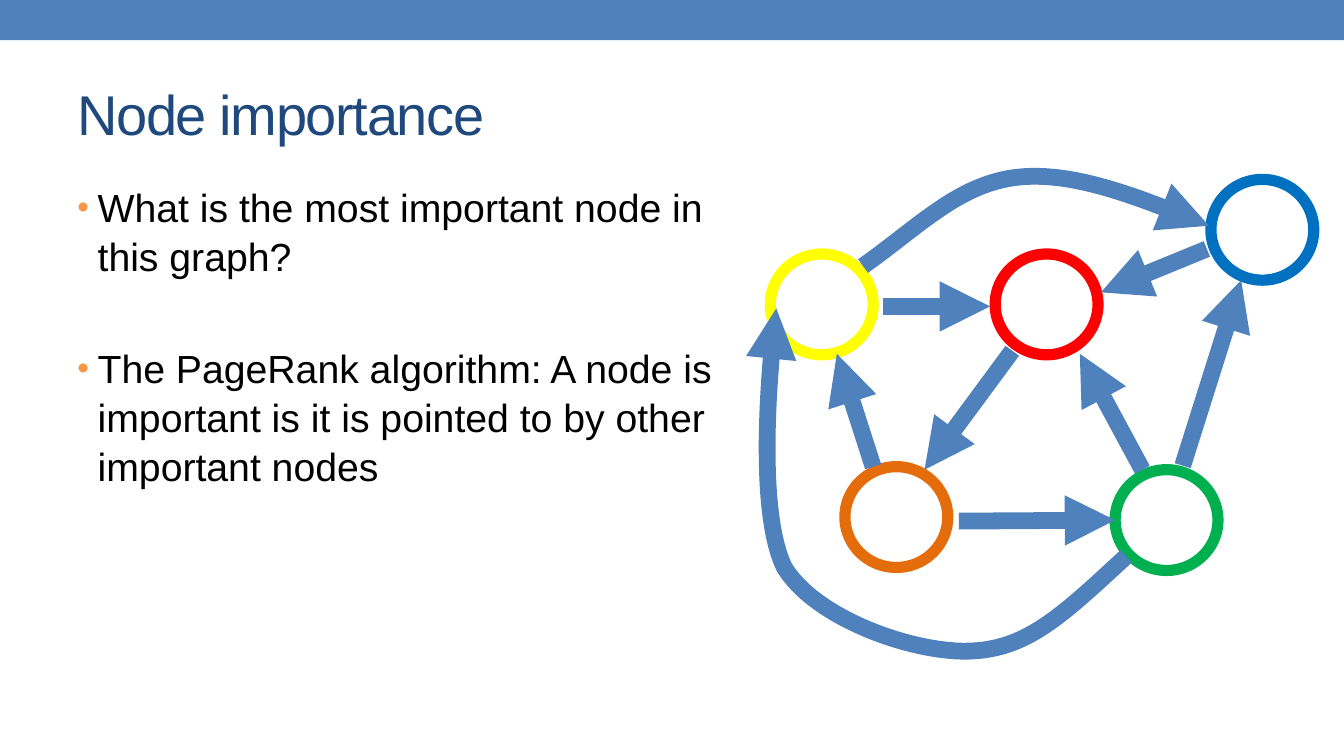
from dataclasses import dataclass

from lxml import etree
from pptx import Presentation
from pptx import util as u
from pptx.dml.color import RGBColor
from pptx.enum import shapes, text
from pptx.oxml import ns


@dataclass(frozen=True)
class Theme:
    font: str = "Arial"
    title_size: int = 40
    body_size: int = 28
    ring_width: int = 8
    arrow_width: int = 12
    accent: str = "4F81BD"
    title: str = "1F497D"
    body: str = "000000"
    bullet: str = "F79646"


THEME = Theme()
NODE_SIZE = (1.02, 1)
NODES = [
    (12.01, 1.78, "0070C0"),
    (9.87, 2.52, "FF0000"),
    (8.38, 4.63, "E46C0A"),
    (7.64, 2.52, "FFFF00"),
    (11.06, 4.66, "00B050"),
]
EDGES = [
    ((11.97, 2.47), (10.92, 2.9)),
    ((11.73, 4.62), (12.31, 2.78)),
    ((11.33, 4.66), (10.71, 3.51)),
    ((9.51, 5.17), (11.06, 5.16)),
    ((8.66, 4.63), (8.3, 3.51)),
    ((8.76, 3.04), (9.82, 3.04)),
    ((10.04, 3.48), (9.17, 4.66)),
]
YELLOW_TO_BLUE = [
    (8.56, 2.64),
    (9.1, 2.26), (9.5, 1.83), (10.08, 1.76),
    (10.65, 1.69), (11.33, 1.97), (11.99, 2.24),
]
GREEN_TO_YELLOW = [
    (11.17, 5.52),
    (10.53, 6.11), (10.19, 6.44), (9.62, 6.46),
    (9.06, 6.48), (8.09, 6.14), (7.78, 5.63),
    (7.53, 5.12), (7.6, 3.9), (7.7, 3.06),
]
BULLETS = [
    ("What is the most important node in this graph?", 2),
    ("The PageRank algorithm: A node is important is it is pointed to "
     "by other important nodes", 45),
]


def rgb(color):
    return RGBColor.from_string(color)


def add_child(parent, tag, **attrs):
    return etree.SubElement(parent, ns.qn(tag), attrs)


def style_line(line, color, width):
    line.color.rgb = rgb(color)
    line.width = u.Pt(width)


def style_arrow(s):
    style_line(s.line, THEME.accent, THEME.arrow_width)
    add_child(s.line._get_or_add_ln(), "a:tailEnd", type="triangle")


def add_band(slide):
    sp = slide.shapes.add_shape(shapes.MSO_SHAPE.RECTANGLE, 0, 0,
                                u.Inches(13.33), u.Inches(0.4))
    sp.shadow.inherit = False
    sp.fill.solid()
    sp.fill.fore_color.rgb = rgb(THEME.accent)
    sp.line.fill.background()


def add_node(slide, left, top, color):
    sp = slide.shapes.add_shape(
        shapes.MSO_SHAPE.OVAL,
        *map(u.Inches, (left, top, *NODE_SIZE)))
    sp.shadow.inherit = False
    sp.fill.background()
    style_line(sp.line, color, THEME.ring_width)


def add_edge(slide, start, end):
    c = slide.shapes.add_connector(shapes.MSO_CONNECTOR.STRAIGHT,
                                   *map(u.Inches, start + end))
    style_arrow(c)
    add_child(c._element.spPr, "a:effectLst")


def bezier(p0, p1, p2, p3, t):
    return tuple(
        u.Inches((1 - t) ** 3 * a + 3 * (1 - t) ** 2 * t * b
                 + 3 * (1 - t) * t ** 2 * c + t ** 3 * d)
        for a, b, c, d in zip(p0, p1, p2, p3))


def add_curved_edge(slide, knots, steps=24):
    points = [bezier(*knots[i:i + 4], n / steps)
              for i in range(0, len(knots) - 1, 3)
              for n in range(1, steps + 1)]
    builder = slide.shapes.build_freeform(*map(u.Inches, knots[0]))
    builder.add_line_segments(points, close=False)
    sp = builder.convert_to_shape()
    sp.shadow.inherit = False
    sp.fill.background()
    style_arrow(sp)


def add_text_box(slide, left, top, width, height, anchor):
    s = slide.shapes.add_textbox(*map(u.Inches, (left, top, width, height)))
    tf = s.text_frame
    tf.word_wrap = True
    tf.vertical_anchor = anchor
    return tf


def style_font(p, size, color):
    p.font.name = THEME.font
    p.font.size = u.Pt(size)
    p.font.color.rgb = rgb(color)


def add_title(slide, title):
    tf = add_text_box(slide, 0.67, 0.58, 12, 1.08, text.MSO_ANCHOR.MIDDLE)
    p = tf.paragraphs[0]
    r = p.add_run()
    r.text = title
    style_font(p, THEME.title_size, THEME.title)
    r._r.get_or_add_rPr().set("spc", "-100")


def add_bullets(slide, items):
    tf = add_text_box(slide, 0.67, 1.75, 6.95, 5.33, text.MSO_ANCHOR.TOP)
    for i, (item, gap) in enumerate(items):
        p = tf.add_paragraph() if i else tf.paragraphs[0]
        p.text = item
        p.line_spacing = 1.04
        p.space_before = u.Pt(gap)
        pPr = p._p.get_or_add_pPr()
        pPr.set("marL", str(u.Inches(0.2)))
        pPr.set("indent", str(u.Inches(-0.2)))
        add_child(add_child(pPr, "a:buClr"), "a:srgbClr", val=THEME.bullet)
        add_child(pPr, "a:buSzPct", val="85000")
        add_child(pPr, "a:buFont", typeface=THEME.font)
        add_child(pPr, "a:buChar", char="•")
        style_font(p, THEME.body_size, THEME.body)


def main():
    prs = Presentation()
    prs.slide_width, prs.slide_height = u.Inches(13.33), u.Inches(7.5)
    slide = prs.slides.add_slide(prs.slide_layouts[6])
    add_band(slide)
    add_title(slide, "Node importance")
    add_bullets(slide, BULLETS)
    for node in NODES:
        add_node(slide, *node)
    for edge in EDGES:
        add_edge(slide, *edge)
    for knots in (YELLOW_TO_BLUE, GREEN_TO_YELLOW):
        add_curved_edge(slide, knots)
    prs.save("out.pptx")


if __name__ == "__main__":
    main()
